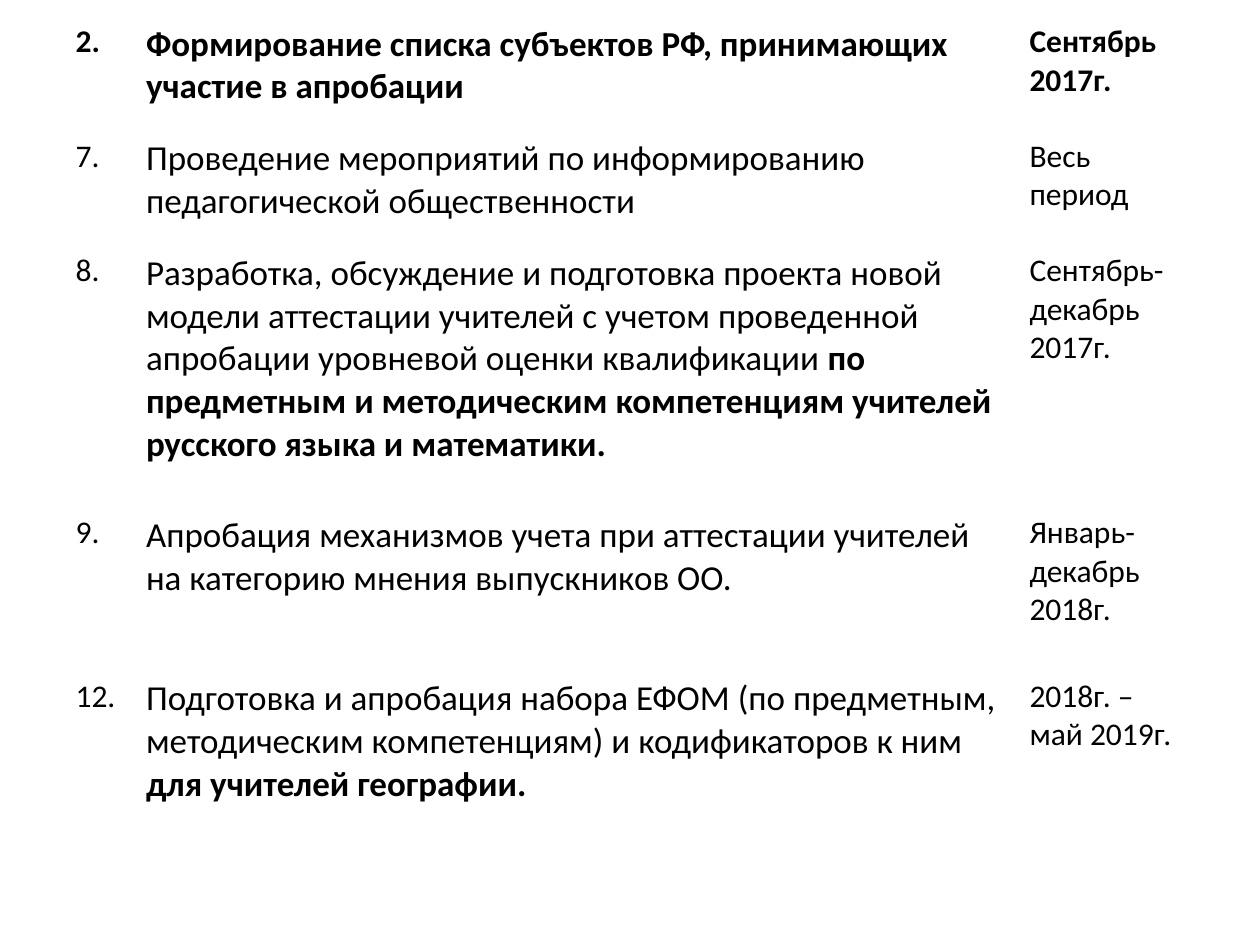
from lxml.etree import SubElement
from pptx import Presentation
from pptx.dml.color import RGBColor
from pptx.oxml.ns import qn
from pptx.util import Cm, Pt

COLORS = {"text": "000000", "line": "FFFFFF"}
FONT = "Calibri"
COLS = [1.42, 17.81, 3.81]
ROWS = [2.31, 2.31, 5.28, 3.3, 3.3, 1.35]
SIZES = [18, 20, 18]

# Number, task, bold ending of the task, dates; the first step is the heading
STEPS = [
    ("2.", "Формирование списка субъектов РФ, принимающих участие в апробации",
     "", "Сентябрь 2017г."),
    ("7.", "Проведение мероприятий по информированию педагогической общественности",
     "", "Весь период"),
    ("8.", "Разработка, обсуждение и подготовка проекта новой модели аттестации "
     "учителей с учетом проведенной апробации уровневой оценки квалификации ",
     "по предметным и методическим компетенциям учителей русского языка и математики.",
     "Сентябрь-декабрь 2017г."),
    ("9.", "Апробация механизмов учета при аттестации учителей на категорию "
     "мнения выпускников ОО.", "", "Январь-декабрь 2018г."),
    ("12.", "Подготовка и апробация набора ЕФОМ (по предметным, методическим "
     "компетенциям) и кодификаторов к ним ", "для учителей географии.",
     "2018г. – май 2019г."),
]


def frame(cell, head):
    """Give a cell its borders, with a thick one under the heading, and no fill."""
    props = cell._tc.get_or_add_tcPr()
    for side in "LRTB":
        width = Pt(3 if head and side == "B" else 1)
        line = SubElement(props, qn(f"a:ln{side}"), w=str(width))
        fill = SubElement(line, qn("a:solidFill"))
        SubElement(fill, qn("a:srgbClr"), val=COLORS["line"])
    cell.fill.background()


def write(cell, text, end, size, bold):
    para = cell.text_frame.paragraphs[0]
    font = para.font
    font.name, font.size = FONT, Pt(size)
    font.color.rgb = RGBColor.from_string(COLORS["text"])
    font.bold = bold
    for part, strong in ((text, bold), (end, True)):
        if part:
            run = para.add_run()
            run.text = part
            run.font.bold = strong


deck = Presentation()
deck.slide_width, deck.slide_height = Cm(25.4), Cm(19.05)
slide = deck.slides.add_slide(deck.slide_layouts[6])
table = slide.shapes.add_table(
    len(ROWS), len(COLS), Cm(1.27), Cm(0.33), Cm(sum(COLS)), Cm(sum(ROWS))).table
table.first_row = table.horz_banding = False
for col, width in zip(table.columns, COLS):
    col.width = Cm(width)
for row, height in zip(table.rows, ROWS):
    row.height = Cm(height)

for r, row in enumerate(table.rows):
    for cell in row.cells:
        frame(cell, r == 0)

for r, (num, task, end, date) in enumerate(STEPS):
    parts = [(num, ""), (task, end), (date, "")]
    for c, (text, tail) in enumerate(parts):
        write(table.cell(r, c), text, tail, SIZES[c], r == 0)

deck.save("out.pptx")
